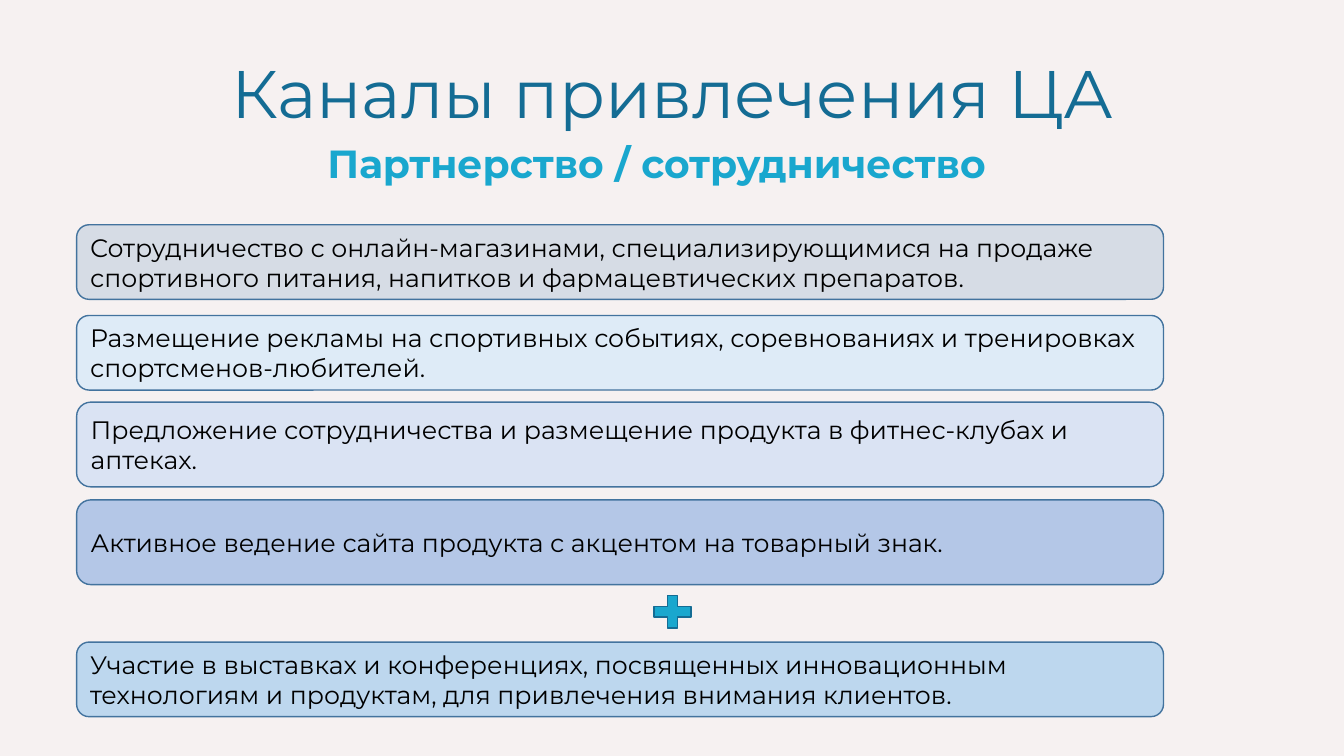
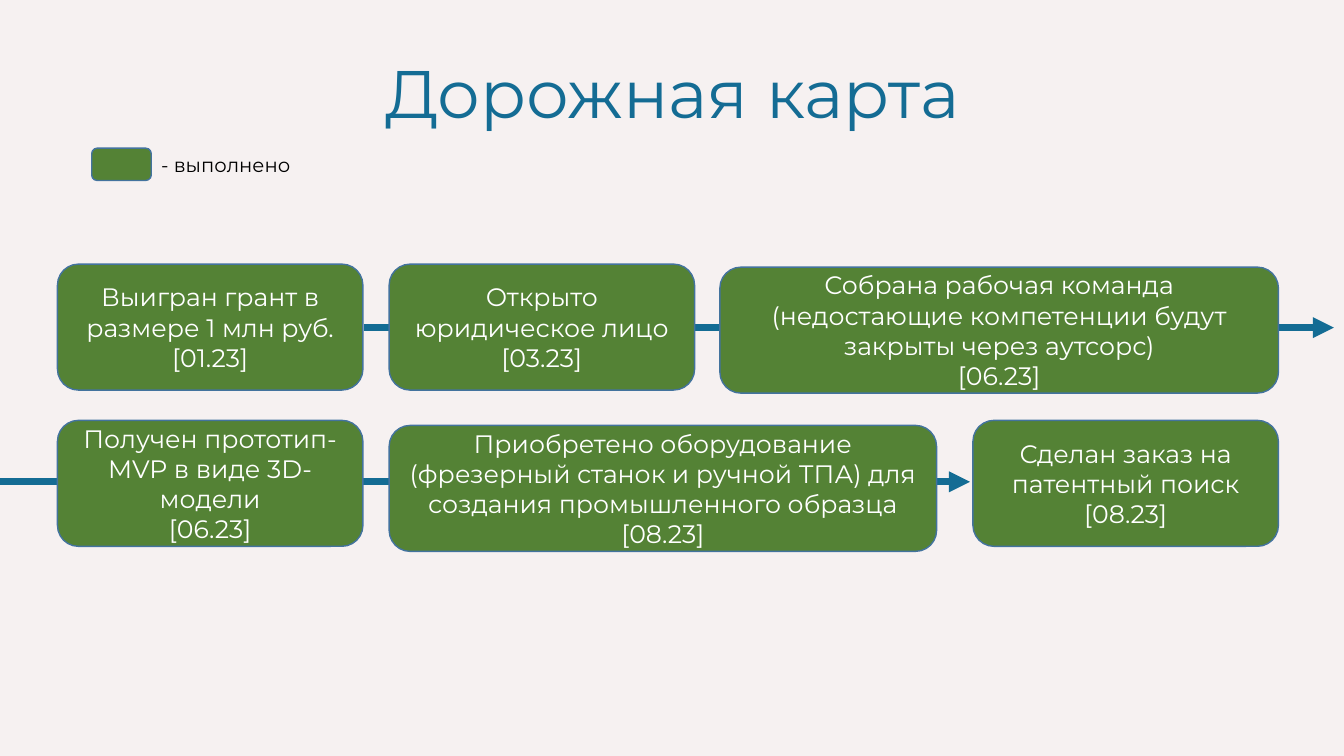
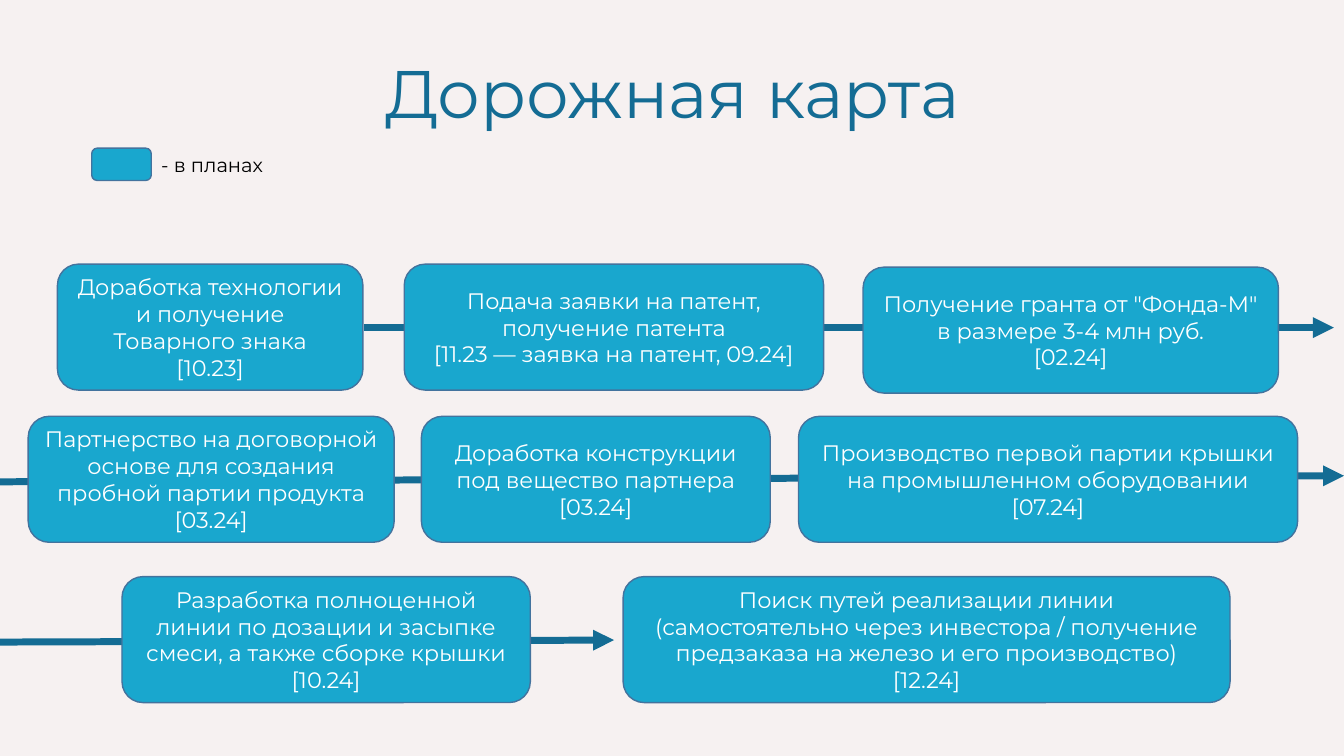
from lxml import etree
from pptx import Presentation
from pptx.dml.color import RGBColor
from pptx.enum.shapes import MSO_CONNECTOR, MSO_SHAPE
from pptx.enum.text import MSO_ANCHOR, PP_ALIGN
from pptx.oxml.ns import qn
from pptx.util import Inches, Pt

ROUNDED = MSO_SHAPE.ROUNDED_RECTANGLE
PLUS = MSO_SHAPE.MATH_PLUS
STRAIGHT = MSO_CONNECTOR.STRAIGHT
LEFT, CENTER = PP_ALIGN.LEFT, PP_ALIGN.CENTER
TOP, MIDDLE = MSO_ANCHOR.TOP, MSO_ANCHOR.MIDDLE

FONT = "Montserrat"
BACKGROUND, DARK, BRIGHT = "F6F1F1", "146C94", "19A7CE"
GREEN, OUTLINE, BLACK, WHITE = "548235", "43739E", "000000", "FFFFFF"
STAGE_HEIGHT = 1.25


def rgb(value):
    return RGBColor.from_string(value)


class Deck:
    """Holds the shared style and the slide being built."""

    def __init__(self):
        self.presentation = Presentation()
        self.presentation.slide_width = Inches(13.33)
        self.presentation.slide_height = Inches(7.5)
        self.slide = None

    def new_slide(self, title):
        layout = self.presentation.slide_layouts[6]
        self.slide = self.presentation.slides.add_slide(layout)
        fill = self.slide.background.fill
        fill.solid()
        fill.fore_color.rgb = rgb(BACKGROUND)
        self.text((0.44, 0.55, 12.46, 0.81), title, 48, DARK, CENTER, MIDDLE, spacing=0.9)

    def fill_frame(self, frame, lines, size, color, align, anchor, bold=False, spacing=None):
        frame.word_wrap = True
        frame.vertical_anchor = anchor
        for index, line in enumerate(lines):
            paragraph = frame.paragraphs[0] if index == 0 else frame.add_paragraph()
            paragraph.alignment = align
            if spacing:
                paragraph.line_spacing = spacing
            run = paragraph.add_run()
            run.text = line
            run.font.name = FONT
            run.font.size = Pt(size)
            run.font.bold = bold
            run.font.color.rgb = rgb(color)

    def text(self, box, content, size, color, align=LEFT, anchor=TOP, bold=False, spacing=None):
        holder = self.slide.shapes.add_textbox(*map(Inches, box))
        self.fill_frame(holder.text_frame, [content], size, color, align, anchor, bold, spacing)

    def shape(self, box, fill, kind=ROUNDED, outline=OUTLINE):
        shape = self.slide.shapes.add_shape(kind, *map(Inches, box))
        shape.shadow.inherit = False
        shape.fill.solid()
        shape.fill.fore_color.rgb = rgb(fill)
        shape.line.color.rgb = rgb(outline)
        shape.line.width = Pt(1)
        return shape

    def card(self, box, fill, lines, size, color, align):
        frame = self.shape(box, fill).text_frame
        self.fill_frame(frame, lines, size, color, align, MIDDLE)

    def arrow(self, start, end):
        arrow = self.slide.shapes.add_connector(STRAIGHT, *map(Inches, start + end))
        arrow.line.color.rgb = rgb(DARK)
        arrow.line.width = Pt(5)
        properties = arrow._element.spPr
        etree.SubElement(properties.find(qn("a:ln")), qn("a:tailEnd"), type="triangle")
        etree.SubElement(properties, qn("a:effectLst"))

    def legend(self, fill, label):
        self.shape((0.91, 1.47, 0.59, 0.32), fill)
        self.text((1.5, 1.47, 2.28, 0.34), label, 14, BLACK)

    def roadmap(self, fill, label, size, arrows, stages):
        self.new_slide("Дорожная карта")
        for start, end in arrows:
            self.arrow(start, end)
        self.legend(fill, label)
        for left, top, width, stage, date in stages:
            box = (left, top, width, STAGE_HEIGHT)
            self.card(box, fill, [stage, f"[{date}]"], size, WHITE, CENTER)


CHANNELS = [
    (2.23, 0.74, "D6DCE5", "Сотрудничество с онлайн-магазинами, специализирующимися на продаже "
     "спортивного питания, напитков и фармацевтических препаратов."),
    (3.13, 0.74, "DEEBF7", "Размещение рекламы на спортивных событиях, соревнованиях и тренировках "
     "спортсменов-любителей."),
    (3.99, 0.84, "DAE3F3", "Предложение сотрудничества и размещение продукта в фитнес-клубах и "
     "аптеках."),
    (4.96, 0.84, "B4C7E7", "Активное ведение сайта продукта с акцентом на товарный знак."),
    (6.37, 0.74, "BDD7EE", "Участие в выставках и конференциях, посвященных инновационным "
     "технологиям и продуктам, для привлечения внимания клиентов."),
]

FIRST_ROW_ARROW = ((3.61, 3.25), (13.23, 3.25))
DONE_ARROWS = [((0, 4.78), (9.62, 4.78)), FIRST_ROW_ARROW]
PLANNED_ARROWS = [((0, 6.37), (6.09, 6.35)), ((0, 4.78), (13.33, 4.72)), FIRST_ROW_ARROW]

DONE_STAGES = [
    (0.57, 2.62, 3.03, "Выигран грант в размере 1 млн руб.", "01.23"),
    (3.86, 2.62, 3.03, "Открыто юридическое лицо", "03.23"),
    (7.14, 2.65, 5.54, "Собрана рабочая команда (недостающие компетенции будут закрыты "
     "через аутсорс)", "06.23"),
    (0.57, 4.17, 3.03, "Получен прототип-MVP в виде 3D-модели", "06.23"),
    (3.86, 4.22, 5.43, "Приобретено оборудование (фрезерный станок и ручной ТПА) для "
     "создания промышленного образца", "08.23"),
    (9.65, 4.17, 3.03, "Сделан заказ на патентный поиск", "08.23"),
]

PLANNED_STAGES = [
    (0.57, 2.62, 3.03, "Доработка технологии и получение Товарного знака", "10.23"),
    (4.01, 2.62, 4.16, "Подача заявки на патент, получение патента",
     "11.23 — заявка на патент, 09.24"),
    (8.56, 2.65, 4.12, 'Получение гранта от "Фонда-М" в размере 3-4 млн руб.', "02.24"),
    (0.28, 4.13, 3.63, "Партнерство на договорной основе для создания пробной партии "
     "продукта", "03.24"),
    (4.18, 4.13, 3.46, "Доработка конструкции под вещество партнера", "03.24"),
    (7.92, 4.13, 4.95, "Производство первой партии крышки на промышленном оборудовании",
     "07.24"),
    (1.21, 5.72, 4.05, "Разработка полноценной линии по дозации и засыпке смеси, а также "
     "сборке крышки", "10.24"),
    (6.18, 5.72, 6.02, "Поиск путей реализации линии (самостоятельно через инвестора / "
     "получение предзаказа на железо и его производство)", "12.24"),
]


def main():
    deck = Deck()
    deck.new_slide("Каналы привлечения ЦА")
    deck.text((3.15, 1.33, 7.03, 0.57), "Партнерство / сотрудничество", 28, BRIGHT, bold=True)
    for top, height, fill, channel in CHANNELS:
        deck.card((0.76, top, 10.78, height), fill, [channel], 18, BLACK, LEFT)
    deck.shape((6.42, 5.85, 0.5, 0.44), BRIGHT, PLUS, DARK)

    deck.roadmap(GREEN, "- выполнено", 18, DONE_ARROWS, DONE_STAGES)
    deck.roadmap(BRIGHT, "- в планах", 16, PLANNED_ARROWS, PLANNED_STAGES)
    deck.presentation.save("out.pptx")


if __name__ == "__main__":
    main()
